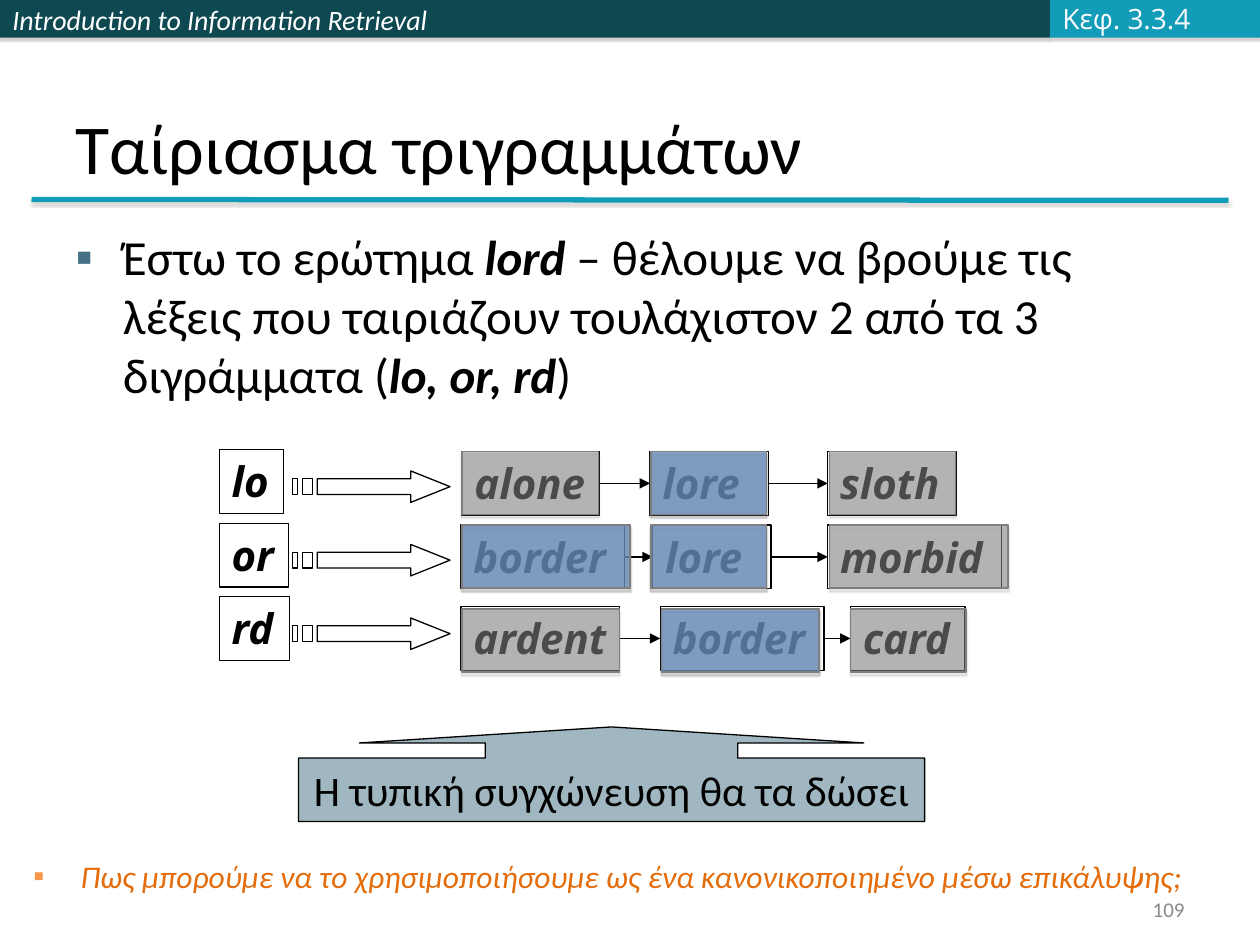
import pptx
import pptx.dml.color
import pptx.enum.dml
import pptx.enum.shapes
import pptx.enum.text
import pptx.oxml
import pptx.oxml.ns
import pptx.util
from lxml import etree

Pt = pptx.util.Pt
RGB = pptx.dml.color.RGBColor
SHAPE = pptx.enum.shapes.MSO_SHAPE
ANCHOR = pptx.enum.text.MSO_ANCHOR
ALIGN = pptx.enum.text.PP_ALIGN
FIT = pptx.enum.text.MSO_AUTO_SIZE
qn = pptx.oxml.ns.qn

BLACK = RGB(0x00, 0x00, 0x00)
WHITE = RGB(0xFF, 0xFF, 0xFF)
PALE = RGB(0xFB, 0xFC, 0xFF)
DARK_TEAL = RGB(0x0E, 0x48, 0x51)
TEAL = RGB(0x13, 0x9C, 0xB7)
SLATE = RGB(0x43, 0x70, 0x85)
GRAY = RGB(0x7F, 0x7F, 0x7F)
SHADOW_GRAY = RGB(0x80, 0x80, 0x80)
PAGE_GRAY = RGB(0x89, 0x89, 0x89)
BLUE = RGB(0x55, 0x8E, 0xD5)
ORANGE = RGB(0xE4, 0x6C, 0x0A)
BULLET_ORANGE = RGB(0xF7, 0x96, 0x46)

BODY_FONT = "Calibri"
TERM_FONT = "Open Sans"
TERM_HEIGHT = 36.5
SHADE_HEIGHT = 36
ROW_PITCH = 42

# Per row: frame top, shade top, then (term, left, width, shade left, shade width, matched)
POSTINGS = [
    (258, 258, [("alone", 264, 78.5, 264, 78, False),
                ("lore", 371.5, 67.7, 372, 66, True),
                ("sloth", 473, 73.4, 474, 72, False)]),
    (300, 300, [("border", 263.5, 93.6, 264, 96, True),
                ("lore", 373, 67.7, 372, 66, True),
                ("morbid", 473, 99.4, 474, 102, False)]),
    (346.6, 348, [("ardent", 263.5, 90.7, 264, 90, False),
                  ("border", 377.3, 93.6, 378, 90, True),
                  ("card", 486, 65.5, 486, 66, False)]),
]
BIGRAMS = [("lo", 36.7), ("or", 39.6), ("rd", 40.3)]


def points(*lengths):
    return [Pt(length) for length in lengths]


def add_run(paragraph, text, size, color, font=BODY_FONT, bold=False, italic=False):
    run = paragraph.add_run()
    run.text = text
    run.font.size, run.font.name = Pt(size), font
    run.font.bold, run.font.italic = bold, italic
    run.font.color.rgb = color


def set_frame(shape, anchor=ANCHOR.TOP, wrap=True, fit=FIT.NONE, align=ALIGN.LEFT):
    """Format the text frame and return its first paragraph."""
    frame = shape.text_frame
    frame.auto_size, frame.word_wrap = fit, wrap
    frame.vertical_anchor = anchor
    frame.paragraphs[0].alignment = align
    return frame.paragraphs[0]


def set_bullet(paragraph, color, space_before):
    paragraph.space_before = Pt(space_before)
    properties = paragraph._p.get_or_add_pPr()
    properties.set("marL", str(Pt(27)))
    properties.set("indent", str(-Pt(27)))
    bullet_color = etree.SubElement(properties, qn("a:buClr"))
    etree.SubElement(bullet_color, qn("a:srgbClr"), val=str(color))
    etree.SubElement(properties, qn("a:buFont"), typeface="Arial")
    etree.SubElement(properties, qn("a:buChar"), char="▪")


def set_effects(shape, shadow):
    """Replace the theme shadow with none, or with a soft one straight below."""
    properties = shape._element.spPr
    effects = etree.SubElement(properties, qn("a:effectLst"))
    if shadow:
        outer = etree.SubElement(effects, qn("a:outerShdw"), blurRad=str(Pt(1)),
                                 dist=str(Pt(1.8)), dir="5400000", rotWithShape="0")
        color = etree.SubElement(outer, qn("a:srgbClr"), val=str(SHADOW_GRAY))
        etree.SubElement(color, qn("a:alpha"), val="35000")


def paint(shape, fill=None, line=None, half_clear=False, shadow=False):
    if fill is None:
        shape.fill.background()
    else:
        shape.fill.solid()
        shape.fill.fore_color.rgb = fill
    if half_clear:
        color = shape._element.spPr.find(qn("a:solidFill"))[0]
        etree.SubElement(color, qn("a:alpha"), val="50000")
    if line is None:
        shape.line.fill.background()
    else:
        shape.line.color.rgb = line
        shape.line.width = Pt(0.75)
    set_effects(shape, shadow)
    return shape


def add_box(slide, box, kind=SHAPE.RECTANGLE, **look):
    return paint(slide.shapes.add_shape(kind, *points(*box)), **look)


def add_line(slide, ends, color, width, arrow=False, shadow=False):
    straight = pptx.enum.shapes.MSO_CONNECTOR.STRAIGHT
    connector = slide.shapes.add_connector(straight, *points(*ends))
    connector.line.color.rgb = color
    connector.line.width = Pt(width)
    if arrow:
        etree.SubElement(connector.line._get_or_add_ln(), qn("a:tailEnd"), type="triangle")
    set_effects(connector, shadow)


def add_header(slide, left, top, width, height):
    course_width, chapter_width = 293.75, 120
    middle = width - course_width - chapter_width
    course = add_box(slide, (left, top, course_width, height), fill=DARK_TEAL, shadow=True)
    add_run(set_frame(course, ANCHOR.MIDDLE), "Introduction to Information Retrieval",
            16, WHITE, italic=True)
    add_box(slide, (left + course_width, top, middle, height), fill=DARK_TEAL, shadow=True)
    chapter_left = left + width - chapter_width
    add_box(slide, (chapter_left, top, chapter_width, height), fill=TEAL, shadow=True)
    chapter = slide.shapes.add_textbox(*points(chapter_left, top - 2.6, 94.3, 26.6))
    add_run(set_frame(chapter, ANCHOR.MIDDLE, wrap=False), "Κεφ. 3.3.4", 16, PALE, TERM_FONT)


def place(placeholder, box):
    placeholder.left, placeholder.top, placeholder.width, placeholder.height = points(*box)


def fill_title(slide, *box):
    title = slide.shapes.title
    place(title, box)
    add_run(set_frame(title, ANCHOR.BOTTOM), "Ταίριασμα τριγραμμάτων", 40, BLACK)
    add_line(slide, (18, 114, 702, 114.5), TEAL, 3, shadow=True)


def fill_body(slide, *box):
    body = slide.placeholders[1]
    place(body, box)
    paragraph = set_frame(body)
    set_bullet(paragraph, SLATE, 5.6)
    for text, strong in [
        ("Έστω το ερώτημα ", False), ("lord", True),
        (" – θέλουμε να βρούμε τις λέξεις που ταιριάζουν τουλάχιστον 2 από τα 3 "
         "διγράμματα (", False),
        ("lo, or, rd", True), (")", False),
    ]:
        add_run(paragraph, text, 28, BLACK, bold=strong, italic=strong)


def add_term(slide, text, left, top, width):
    frame = add_box(slide, (left, top, width, TERM_HEIGHT), line=BLACK)
    paragraph = set_frame(frame, wrap=False, fit=FIT.SHAPE_TO_FIT_TEXT)
    add_run(paragraph, text, 24, BLACK, TERM_FONT, bold=True, italic=True)


def add_striped_arrow(slide, left, top, width, height):
    """Right arrow with two loose stripes behind its shaft, as one outline."""
    def at(x, y):
        return Pt(left + width * x), Pt(top + height * y)

    def stripe(start, end):
        return [at(start, 0.25), at(start, 0.75), at(end, 0.75), at(end, 0.25)]

    head = [at(0.75, 0), at(0.75, 0.25), at(5 / 32, 0.25), at(5 / 32, 0.75),
            at(0.75, 0.75), at(0.75, 1), at(1, 0.5)]
    builder = slide.shapes.build_freeform(*head[0])
    builder.add_line_segments(head[1:], close=True)
    for outline in (stripe(2 / 32, 4 / 32), stripe(0, 1 / 32)):
        builder.move_to(*outline[0])
        builder.add_line_segments(outline[1:], close=True)
    paint(builder.convert_to_shape(), line=BLACK)


def add_bigrams(slide, left, top):
    for row, (bigram, width) in enumerate(BIGRAMS):
        row_top = top + row * ROW_PITCH
        add_term(slide, bigram, left, row_top, width)
        add_striped_arrow(slide, left + 41.9, row_top + 12.1, 90, 18)


def add_postings(slide, top, shade_top, postings):
    """One chain of terms, each shaded gray and also blue when it matches."""
    middle = top + TERM_HEIGHT / 2
    for (_, left, width, *_), following in zip(postings, postings[1:]):
        add_line(slide, (left + width, middle, following[1], middle), BLACK, 0.75, arrow=True)
    for term, left, width, shade_left, shade_width, matched in postings:
        add_term(slide, term, left, top, width)
        for shade in [GRAY, BLUE] if matched else [GRAY]:
            add_box(slide, (shade_left, shade_top, shade_width, SHADE_HEIGHT),
                    fill=shade, line=GRAY, half_clear=True, shadow=True)


def add_callout(slide, *box):
    callout = add_box(slide, box, SHAPE.UP_ARROW_CALLOUT,
                      fill=SLATE, line=BLACK, half_clear=True)
    for index, value in enumerate((2.67, 2.67, 0.17, 0.67)):
        callout.adjustments[index] = value
    paragraph = set_frame(callout, ANCHOR.MIDDLE, wrap=False, align=ALIGN.CENTER)
    add_run(paragraph, "Η τυπική συγχώνευση θα τα δώσει", 24, BLACK)


def add_question(slide, *box):
    paragraph = set_frame(slide.shapes.add_textbox(*points(*box)))
    set_bullet(paragraph, BULLET_ORANGE, 3.6)
    add_run(paragraph, "Πως μπορούμε να το χρησιμοποιήσουμε ως ένα κανονικοποιημένο "
            "μέσω επικάλυψης;", 18, ORANGE, italic=True)


def add_page_number(slide, *box):
    number = slide.shapes.add_textbox(*points(*box))
    add_run(set_frame(number, ANCHOR.MIDDLE, align=ALIGN.RIGHT), "109", 12, PAGE_GRAY)


def main():
    deck = pptx.Presentation()
    deck.slide_width, deck.slide_height = points(720, 540)
    slide = deck.slides.add_slide(deck.slide_layouts[1])
    add_header(slide, 0, 0, 720, 21.6)
    fill_title(slide, 36, 21.6, 648, 90)
    fill_body(slide, 36, 126, 648, 390)
    add_bigrams(slide, 125.3, 257)
    for row in POSTINGS:
        add_postings(slide, *row)
    add_callout(slide, 170.6, 415.4, 357.8, 54)
    add_question(slide, 12, 486, 690, 29)
    add_page_number(slide, 516, 510, 168, 19.5)
    deck.save("out.pptx")


if __name__ == "__main__":
    main()
